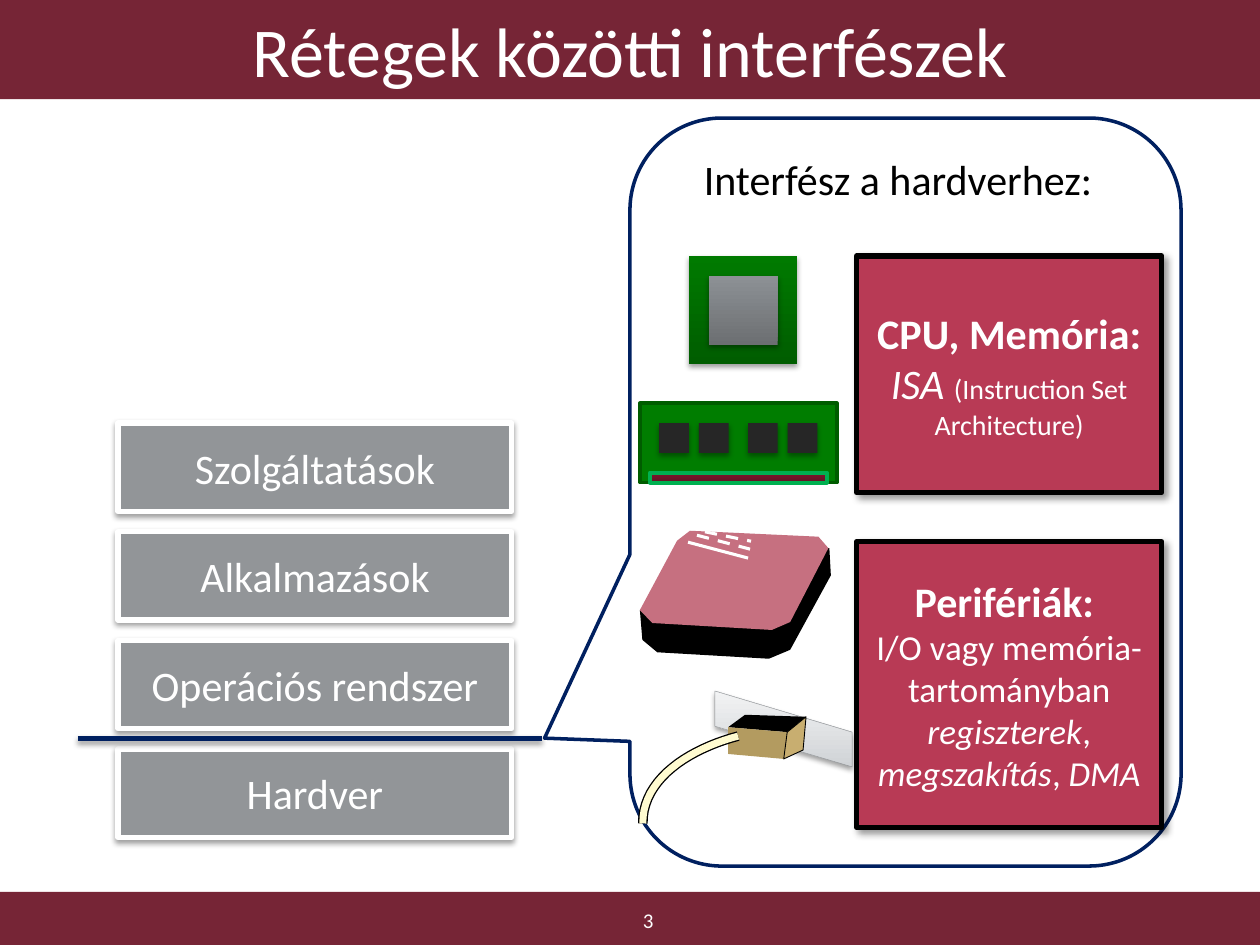
from lxml import etree
from pptx import Presentation
from pptx import util as u
from pptx.dml.color import RGBColor
from pptx.enum import dml, shapes, text
from pptx.oxml.ns import qn

WHITE = RGBColor(0xFF, 0xFF, 0xFF)
BLACK = RGBColor(0, 0, 0)
BURGUNDY = RGBColor(0x76, 0x25, 0x36)
CRIMSON = RGBColor(0xB8, 0x3A, 0x55)
GRAY = RGBColor(0x92, 0x95, 0x98)
NAVY = RGBColor(0x00, 0x20, 0x60)
BOARD = RGBColor(0x00, 0x7D, 0x00)
BOARD_EDGE = RGBColor(0x00, 0x5C, 0x00)
CHIP = RGBColor(0x26, 0x26, 0x26)
CONTACT_EDGE = RGBColor(0x00, 0xB0, 0x50)
DISK_TOP = RGBColor(0xC6, 0x70, 0x80)
GOLD = RGBColor(0xB3, 0x9B, 0x60)
LIGHT_GOLD = RGBColor(0xC8, 0xAE, 0x70)
CABLE = RGBColor(0xFF, 0xFB, 0xD0)
# Gradients run from bottom to top
CPU_GREEN = [RGBColor(0x00, 0x5D, 0x00), RGBColor(0x00, 0x7A, 0x00)]
CPU_GRAY = [RGBColor(0x6C, 0x6F, 0x72), RGBColor(0x8D, 0x91, 0x95)]
CONTACT = [RGBColor(0x61, 0x13, 0x23), RGBColor(0x81, 0x16, 0x2D)]
PANEL = [RGBColor(0xD0, 0xD3, 0xD6), RGBColor(0xF2, 0xF3, 0xF4)]

# Shadows: blur, distance (points), direction (degrees), opacity (percent)
SOFT = (3.1, 1.7, 90, 37)
DIAGONAL = (4, 3, 45, 40)


def style(shape, fill=None, line=None, width=1, shadow=None):
    if isinstance(fill, list):
        shape.fill.gradient()
        shape.fill.gradient_angle = 90
        for stop, color in zip(shape.fill.gradient_stops, fill):
            stop.color.rgb = color
    elif fill is not None:
        shape.fill.solid()
        shape.fill.fore_color.rgb = fill
    elif hasattr(shape, "fill"):
        shape.fill.background()
    if line is None:
        shape.line.fill.background()
    else:
        shape.line.color.rgb = line
        shape.line.width = u.Pt(width)
    effects = etree.SubElement(shape._element.spPr, qn("a:effectLst"))
    if shadow:
        blur, distance, direction, opacity = shadow
        outer = etree.SubElement(
            effects, qn("a:outerShdw"), blurRad=str(u.Pt(blur)), dist=str(u.Pt(distance)),
            dir=str(direction * 60000), algn="ctr", rotWithShape="0")
        color = etree.SubElement(outer, qn("a:srgbClr"), val="000000")
        etree.SubElement(color, qn("a:alpha"), val=str(opacity * 1000))
    return shape


def write(shape, *runs, color=WHITE, wrap=True):
    frame = shape.text_frame
    frame.word_wrap = wrap
    frame.vertical_anchor = text.MSO_ANCHOR.MIDDLE
    paragraph = frame.paragraphs[0]
    paragraph.alignment = text.PP_ALIGN.CENTER
    for words, size, formats in runs:
        if words == "\n":
            paragraph.add_line_break()
            continue
        run = paragraph.add_run()
        run.text = words
        run.font.color.rgb = color
        for name, value in {"name": "Calibri", "size": u.Pt(size), **formats}.items():
            setattr(run.font, name, value)


presentation = Presentation()
presentation.slide_width, presentation.slide_height = u.Cm(25.4), u.Cm(19.05)
slide = presentation.slides.add_slide(presentation.slide_layouts[5])
items = slide.shapes
RECTANGLE = shapes.MSO_SHAPE.RECTANGLE

# Footer bar and title
footer = items.add_shape(RECTANGLE, 0, u.Cm(17.98), u.Cm(25.4), u.Cm(1.07))
style(footer, BURGUNDY)
title = items.title
title.left, title.top, title.width, title.height = 0, 0, u.Cm(25.4), u.Cm(2)
style(title, BURGUNDY)
write(title, ("Rétegek közötti interfészek", 40, {}))

# Layer stack
layers = ["Szolgáltatások", "Alkalmazások", "Operációs rendszer", "Hardver"]
for index, name in enumerate(layers):
    layer = items.add_shape(RECTANGLE, u.Cm(2.38), u.Cm(8.53 + 2.19 * index),
                            u.Cm(7.94), u.Cm(1.78))
    style(layer, GRAY, WHITE, 3, SOFT)
    write(layer, (name, 24, {}))

# Hardware boundary
boundary = items.add_connector(shapes.MSO_CONNECTOR.STRAIGHT, u.Cm(1.57), u.Cm(14.88),
                               u.Cm(10.92), u.Cm(14.88))
style(boundary, line=NAVY, width=3, shadow=SOFT)

# Callout with heading
callout = items.add_shape(shapes.MSO_SHAPE.ROUNDED_RECTANGULAR_CALLOUT,
                          u.Cm(12.7), u.Cm(2.38), u.Cm(11.11), u.Cm(15.08))
for index, value in enumerate((-0.655, 0.329, 0.167)):
    callout.adjustments[index] = value
style(callout, WHITE, NAVY, 2)
heading = items.add_textbox(u.Cm(13.89), u.Cm(2.97), u.Cm(8.43), u.Cm(1.27))
write(heading, ("Interfész a hardverhez:", 24, {}), color=BLACK, wrap=False)

# Processor, memory module, chips and contacts
parts = [
    (13.89, 5.16, 2.18, 2.18, CPU_GREEN, None, 0, SOFT),
    (14.29, 5.56, 1.39, 1.39, CPU_GRAY, None, 0, SOFT),
    (12.9, 8.13, 3.97, 1.6, BOARD, BOARD_EDGE, 2, None),
    *[(left, 8.53, 0.6, 0.6, CHIP, None, 0, SOFT) for left in (13.29, 14.09, 15.08, 15.88)],
    (13.1, 9.53, 3.57, 0.2, CONTACT, CONTACT_EDGE, 2.25, None),
]
for left, top, width, height, *look in parts:
    part = items.add_shape(RECTANGLE, u.Cm(left), u.Cm(top), u.Cm(width), u.Cm(height))
    style(part, *look)

# Interface boxes
bold, italic = {"bold": True}, {"italic": True}
interfaces = [
    (5.16, 4.77, [("CPU, Memória: ", 24, bold), ("ISA ", 24, italic),
                  ("(Instruction Set Architecture)", 16, {})]),
    (10.92, 5.76, [("Perifériák: ", 24, bold), ("\n", 24, {}),
                   ("I/O vagy memória-tartományban ", 20, {}),
                   ("regiszterek", 20, italic), (", ", 20, {}),
                   ("megszakítás", 20, italic), (", ", 20, {}), ("DMA", 20, italic)]),
]
for top, height, runs in interfaces:
    interface = items.add_shape(RECTANGLE, u.Cm(17.27), u.Cm(top), u.Cm(6.15), u.Cm(height))
    style(interface, CRIMSON, BLACK, 3, DIAGONAL)
    write(interface, *runs)

# Cable as points along a Bézier curve
controls = [(14.88, 14.84), (13.9, 15.1), (12.95, 15.7), (12.96, 16.6)]
cable = []
for step in range(21):
    t = step / 20
    weights = ((1 - t) ** 3, 3 * t * (1 - t) ** 2, 3 * t ** 2 * (1 - t), t ** 3)
    cable.append([sum(w * point[axis] for w, point in zip(weights, controls))
                  for axis in (0, 1)])

# Disk, wall panel, plug and cable outlines
outlines = [
    ([(12.9, 12.3), (12.95, 12.9), (13.25, 13.15), (15.5, 13.28), (15.93, 13.1),
      (16.75, 11.6), (16.72, 11.05), (15.5, 11)], BLACK, None, 0, None),
    ([(13.91, 10.7), (16.5, 10.82), (16.7, 11.05), (15.93, 12.54), (15.56, 12.7),
      (13.15, 12.56), (12.9, 12.3), (13.65, 10.9)], DISK_TOP, None, 0, None),
    ([(14.41, 13.93), (17.18, 14.76), (17.18, 15.46), (14.41, 14.64)], PANEL, GRAY, 0.25, SOFT),
    ([(14.68, 14.66), (15.02, 14.41), (16.25, 14.45), (15.87, 14.76)], BLACK, None, 0, None),
    ([(14.68, 14.66), (15.87, 14.76), (15.8, 15.3), (14.68, 15.2)], GOLD, None, 0, None),
    ([(15.87, 14.76), (16.25, 14.45), (16.19, 15.12), (15.8, 15.3)], LIGHT_GOLD, BLACK, 0.5, None),
    (cable, None, BLACK, 5.5, None),
    (cable, None, CABLE, 4, None),
]
for points, *look in outlines:
    corners = [(u.Cm(x), u.Cm(y)) for x, y in points]
    builder = items.build_freeform(*corners[0])
    builder.add_line_segments(corners[1:], close=points is not cable)
    style(builder.convert_to_shape(), *look)

# Label lines on the disk
for x1, y1, x2, y2, dash in [(13.87, 10.93, 15.08, 11.25, None),
                             (14.05, 10.79, 15.12, 11.07, dml.MSO_LINE.DASH),
                             (14.21, 10.72, 15.14, 10.91, dml.MSO_LINE.DASH)]:
    mark = items.add_connector(shapes.MSO_CONNECTOR.STRAIGHT,
                               u.Cm(x1), u.Cm(y1), u.Cm(x2), u.Cm(y2))
    style(mark, line=WHITE, width=1.75)
    mark.line.dash_style = dash

# Page number
number = items.add_textbox(u.Cm(8.94), u.Cm(18.06), u.Cm(8.26), u.Cm(0.99))
write(number, ("3", 12, {}))

presentation.save("out.pptx")
